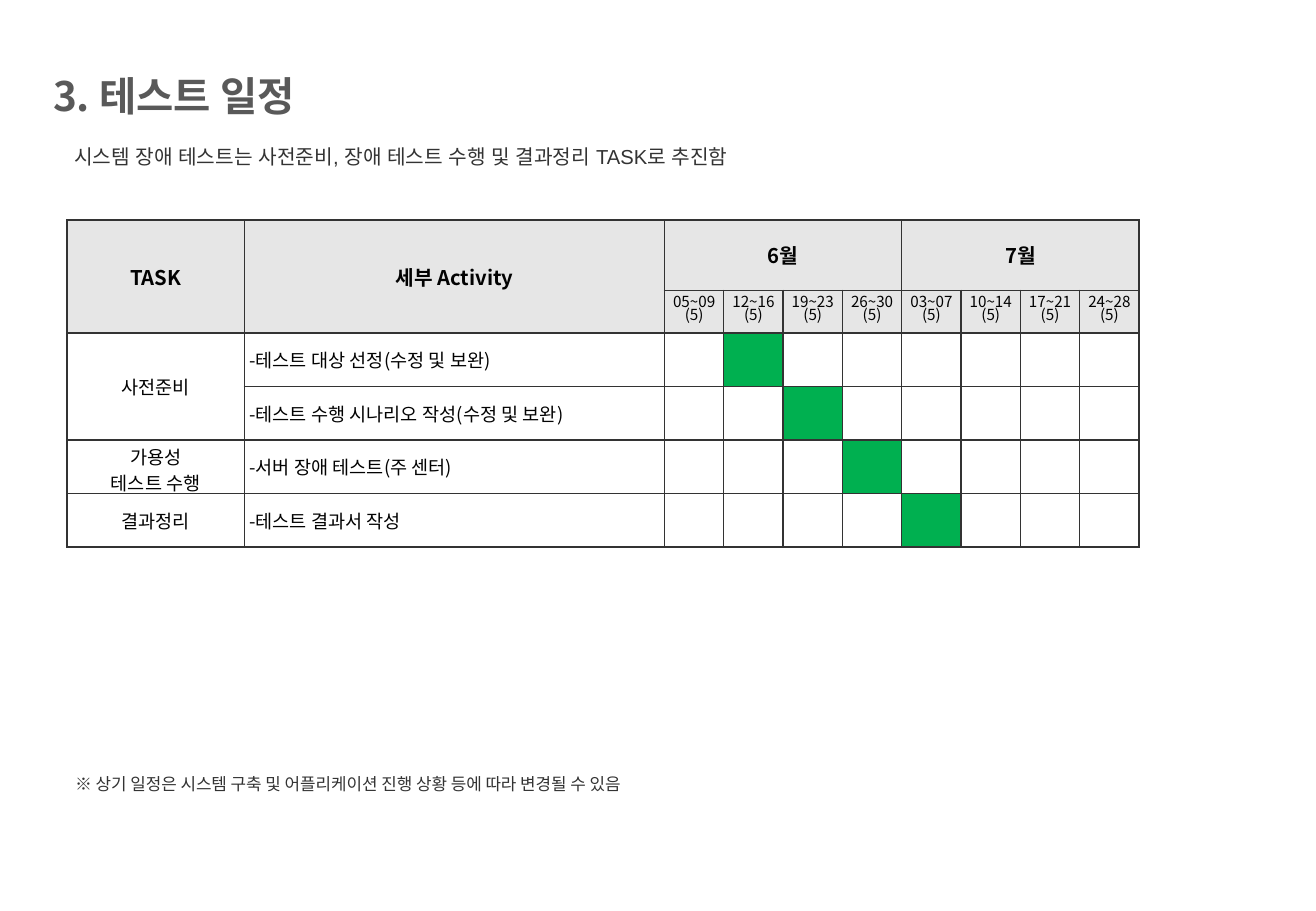
import pptx
import pptx.dml.color
import pptx.enum.text
import pptx.oxml
import pptx.oxml.ns
import pptx.util
from lxml import etree
from pptx.util import Cm, Pt

KOREAN = "Noto Sans CJK KR"
GRAY, WHITE, GREEN, INK, LINE = "E6E6E6", "FFFFFF", "00B050", "020202", "333333"

TITLE = "3. 테스트 일정"
SUMMARY = "시스템 장애 테스트는 사전준비, 장애 테스트 수행 및 결과정리 TASK로 추진함"
FOOTNOTE = "※ 상기 일정은 시스템 구축 및 어플리케이션 진행 상황 등에 따라 변경될 수 있음"
HEADINGS = ["TASK", "세부 Activity"]
MONTHS = ["6월", "7월"]
WEEKS = ["05~09", "12~16", "19~23", "26~30", "03~07", "10~14", "17~21", "24~28"]
# task lines, activities with the index of the scheduled week
TASKS = [
    (["사전준비"], [("-테스트 대상 선정(수정 및 보완)", 1),
                ("-테스트 수행 시나리오 작성(수정 및 보완)", 2)]),
    (["가용성", "테스트 수행"], [("-서버 장애 테스트(주 센터)", 3)]),
    (["결과정리"], [("-테스트 결과서 작성", 4)]),
]
COLUMNS = [3.71, 8.78] + [1.24] * len(WEEKS)
ROWS = [1.47, 0.89] + [1.12] * sum(len(acts) for _, acts in TASKS)
WEEKS_PER_MONTH = len(WEEKS) // len(MONTHS)


def color(value):
    return pptx.dml.color.RGBColor.from_string(value)


def write(tf, lines, size, rgb, name=KOREAN, bold=False, align=None, spacing=None):
    for i, line in enumerate(lines):
        p = tf.paragraphs[0] if i == 0 else tf.add_paragraph()
        p.text = line
        p.alignment = align
        p.line_spacing = spacing
        f = p.font
        f.size, f.bold, f.name = Pt(size), bold, name
        f.color.rgb = color(rgb)
        ea = etree.SubElement(f._element, pptx.oxml.ns.qn("a:ea"))
        ea.set("typeface", name)


def add_text(s, box, text, size, rgb, wrap=True, top=0.13, **style):
    tf = s.shapes.add_textbox(*[Cm(v) for v in box]).text_frame
    tf.word_wrap = wrap
    tf.margin_top = Cm(top)
    write(tf, [text], size, rgb, **style)


def format_cell(cell, fill):
    """Set borders, fill, small margins and middle anchoring."""
    tcPr = cell._tc.get_or_add_tcPr()
    for side in ("lnL", "lnR", "lnT", "lnB"):
        ln = etree.SubElement(tcPr, pptx.oxml.ns.qn("a:" + side), w=str(Pt(1)))
        paint = etree.SubElement(ln, pptx.oxml.ns.qn("a:solidFill"))
        etree.SubElement(paint, pptx.oxml.ns.qn("a:srgbClr"), val=LINE)
    cell.fill.solid()
    cell.fill.fore_color.rgb = color(fill)
    cell.margin_left = cell.margin_right = 0
    cell.margin_top = cell.margin_bottom = Cm(0.05)
    cell.vertical_anchor = pptx.enum.text.MSO_ANCHOR.MIDDLE


def add_schedule(s):
    center = pptx.enum.text.PP_ALIGN.CENTER
    table = s.shapes.add_table(len(ROWS), len(COLUMNS), Cm(1.4), Cm(4.6),
                               Cm(sum(COLUMNS)), Cm(sum(ROWS))).table
    for column, width in zip(table.columns, COLUMNS):
        column.width = Cm(width)
    for i, height in enumerate(ROWS):
        table.rows[i].height = Cm(height)
        for j in range(len(COLUMNS)):
            format_cell(table.cell(i, j), GRAY if i < 2 else WHITE)

    def heading(text, row, col, last_row, last_col):
        cell = table.cell(row, col)
        cell.merge(table.cell(last_row, last_col))
        write(cell.text_frame, [text], 12, INK, bold=True, align=center)

    for j, text in enumerate(HEADINGS):
        heading(text, 0, j, 1, j)
    for m, text in enumerate(MONTHS):
        first = 2 + m * WEEKS_PER_MONTH
        heading(text, 0, first, 0, first + WEEKS_PER_MONTH - 1)
    for j, week in enumerate(WEEKS, 2):
        write(table.cell(1, j).text_frame, [week, "(5)"], 9, INK,
              align=center, spacing=Pt(8))

    row = 2
    for task, activities in TASKS:
        cell = table.cell(row, 0)
        if len(activities) > 1:
            cell.merge(table.cell(row + len(activities) - 1, 0))
        write(cell.text_frame, task, 11, INK, align=center)
        for activity, week in activities:
            cell = table.cell(row, 1)
            cell.margin_left = cell.margin_right = Cm(0.1)
            write(cell.text_frame, [activity], 11, INK)
            table.cell(row, 2 + week).fill.fore_color.rgb = color(GREEN)
            row += 1


def main():
    prs = pptx.Presentation()
    prs.slide_width, prs.slide_height = Cm(27.51), Cm(19.05)
    s = prs.slides.add_slide(prs.slide_layouts[6])
    add_text(s, (0.86, 0.71, 20.47, 1.85), TITLE, 24, "595959", top=0.78, bold=True)
    add_text(s, (1.3, 2.82, 25.86, 1.47), SUMMARY, 12, LINE, name="Arial", spacing=1.15)
    add_schedule(s)
    add_text(s, (1.32, 16.05, 13.46, 0.69), FOOTNOTE, 10, LINE, wrap=False)
    prs.save("out.pptx")


if __name__ == "__main__":
    main()
